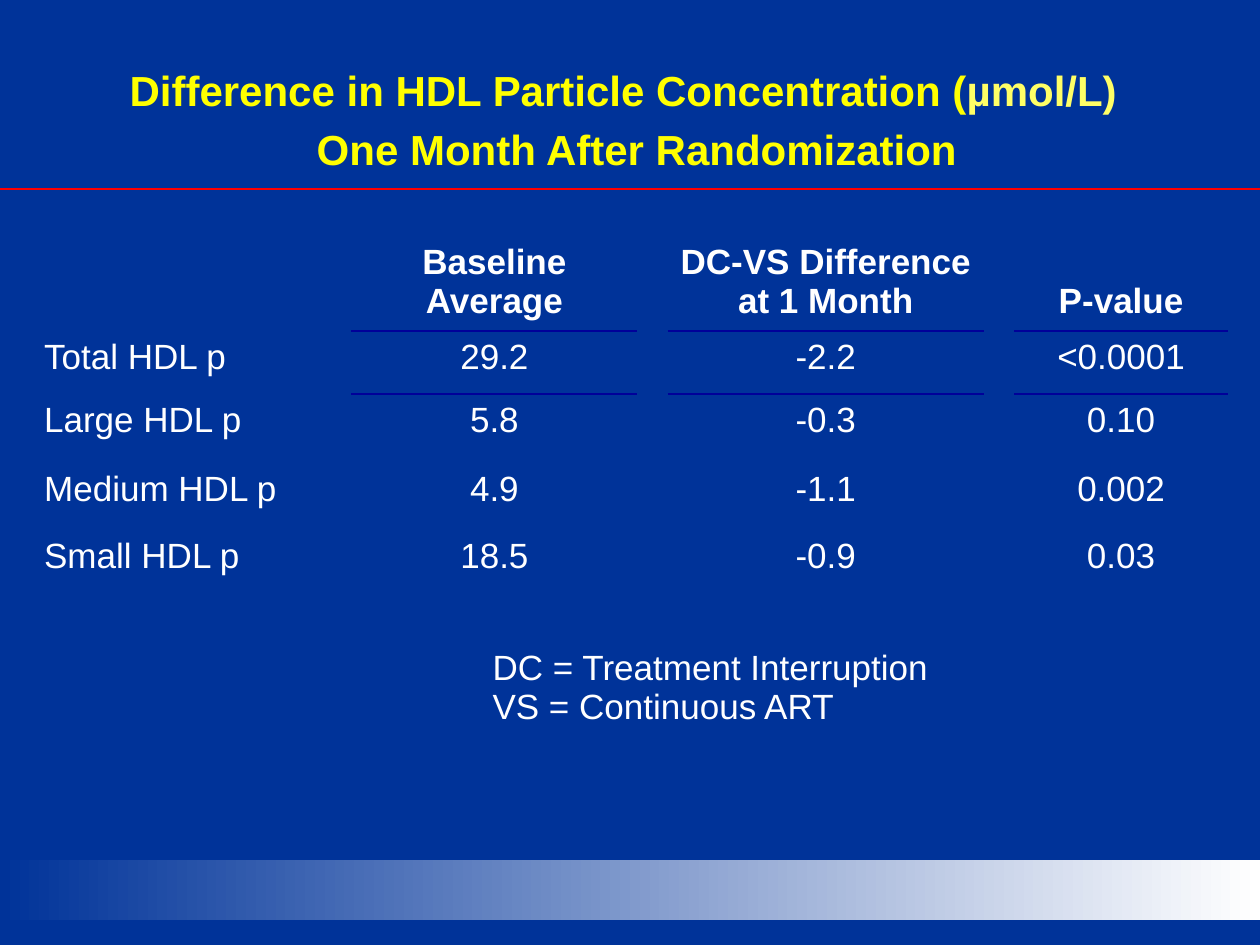
from dataclasses import dataclass

from lxml import etree
from pptx import Presentation
from pptx.dml.color import RGBColor
from pptx.enum.shapes import MSO_CONNECTOR, MSO_SHAPE
from pptx.enum.text import MSO_ANCHOR, PP_ALIGN
from pptx.oxml.ns import qn
from pptx.util import Inches, Pt

LEFT, CENTER = PP_ALIGN.LEFT, PP_ALIGN.CENTER
TOP, MIDDLE, BOTTOM = MSO_ANCHOR.TOP, MSO_ANCHOR.MIDDLE, MSO_ANCHOR.BOTTOM
RECT, STRAIGHT = MSO_SHAPE.RECTANGLE, MSO_CONNECTOR.STRAIGHT

NAVY, WHITE, YELLOW, PALE_YELLOW = "003399", "FFFFFF", "FFFF00", "FFFF66"
RED, RULE_BLUE = "FF0000", "000099"
NO_STYLE_NO_GRID = "{2D5ABB26-0587-4C30-8999-92F81FD0307C}"


@dataclass
class Row:
    cells: tuple[str, ...]
    height: float


GAP = 0.23
COLUMNS = (2.3, GAP, 2.27, GAP, 2.51, GAP, 1.7)  # text columns with gaps between
ROWS = (
    Row(("", "Baseline Average", "DC-VS Difference at 1 Month", "P-value"), 0.75),
    Row(("Total HDL p", "29.2", "-2.2", "<0.0001"), 0.5),
    Row(("Large HDL p", "5.8", "-0.3", "0.10"), 0.55),
    Row(("Medium HDL p", "4.9", "-1.1", "0.002"), 0.53),
    Row(("Small HDL p", "18.5", "-0.9", "0.03"), 0.53),
)
LEGEND = Row(("DC = Treatment Interruption", "VS = Continuous ART"), 1.19)


def rgb(color: str) -> RGBColor:
    return RGBColor.from_string(color)


def add_run(p, text: str, color: str = WHITE, size: float = 20, bold: bool = False) -> None:
    r = p.add_run()
    r.text = text
    for name, value in {"name": "Arial", "size": Pt(size), "bold": bold}.items():
        setattr(r.font, name, value)
    r.font.color.rgb = rgb(color)


def add_border(cell, side: str) -> None:
    ln = etree.Element(qn(f"a:{side}"), w=str(Pt(1.5)))
    fill = etree.SubElement(ln, qn("a:solidFill"))
    etree.SubElement(fill, qn("a:srgbClr"), val=RULE_BLUE)
    cell._tc.get_or_add_tcPr().insert(0, ln)


def fill_cell(cell, text: str, align: PP_ALIGN, header: bool) -> None:
    cell.vertical_anchor = BOTTOM if header else TOP
    if header:
        cell.margin_bottom = Inches(0.08)
    p = cell.text_frame.paragraphs[0]
    p.alignment = align
    add_run(p, text, bold=header)


def add_results_table(s) -> None:
    heights = [row.height for row in (*ROWS, LEGEND)]
    frame = s.shapes.add_table(len(heights), len(COLUMNS), Inches(0.25), Inches(1.83),
                               Inches(sum(COLUMNS)), Inches(sum(heights)))
    table = frame.table
    table.first_row = table.horz_banding = False
    table._tbl.tblPr.find(qn("a:tableStyleId")).text = NO_STYLE_NO_GRID
    for column, width in zip(table.columns, COLUMNS):
        column.width = Inches(width)
    for row, height in zip(table.rows, heights):
        row.height = Inches(height)
    for cell in table.iter_cells():
        cell.fill.background()

    # Header and values
    for i, row in enumerate(ROWS):
        for j, text in enumerate(row.cells):
            cell = table.cell(i, 2 * j)
            if text:
                fill_cell(cell, text, CENTER if j else LEFT, header=i == 0)
            if j and i < 2:
                add_border(cell, ("lnB", "lnT")[i])

    # Legend across the value columns
    last = len(ROWS)
    legend = table.cell(last, 2)
    legend.merge(table.cell(last, len(COLUMNS) - 1))
    legend.margin_left, legend.margin_top = Inches(1.12), Inches(0.41)
    tf = legend.text_frame
    for i, text in enumerate(LEGEND.cells):
        add_run(tf.add_paragraph() if i else tf.paragraphs[0], text)


def add_title(s, width: int, height: int) -> None:
    box = s.shapes.add_textbox(int(width * 0.05), int(height * 0.04),
                               int(width * 0.9), Inches(1.25))
    tf = box.text_frame
    tf.word_wrap = True
    tf.vertical_anchor = MIDDLE
    p = tf.paragraphs[0]
    p.alignment = CENTER
    add_run(p, "Difference in HDL Particle Concentration (", YELLOW, 24, True)
    add_run(p, "µmol/L)", PALE_YELLOW, 24, True)
    add_run(p, " ", YELLOW, 28, True)
    p.add_line_break()
    add_run(p, " ", YELLOW, 28, True)
    add_run(p, "One Month After Randomization", YELLOW, 24, True)


def add_footer_band(s, width: int, height: int) -> None:
    band = s.shapes.add_shape(RECT, 0, int(height * 0.91), width, Inches(0.48))
    band.shadow.inherit = False
    band.line.fill.background()
    band.fill.gradient()
    band.fill.gradient_angle = 0
    for stop, position, color in zip(band.fill.gradient_stops, (0, 1), (NAVY, WHITE)):
        stop.position = position
        stop.color.rgb = rgb(color)


def add_title_rule(s, width: int, height: int) -> None:
    y = int(height * 0.2)
    rule = s.shapes.add_connector(STRAIGHT, 0, y, width, y)
    rule.line.color.rgb = rgb(RED)
    rule.line.width = Pt(0.75)
    etree.SubElement(rule._element.spPr, qn("a:effectLst"))


def main() -> None:
    prs = Presentation()
    prs.slide_width, prs.slide_height = Inches(10), Inches(7.5)
    size = prs.slide_width, prs.slide_height
    s = prs.slides.add_slide(prs.slide_layouts[6])
    s.background.fill.solid()
    s.background.fill.fore_color.rgb = rgb(NAVY)
    add_footer_band(s, *size)
    add_title(s, *size)
    add_results_table(s)
    add_title_rule(s, *size)
    prs.save("out.pptx")


if __name__ == "__main__":
    main()
